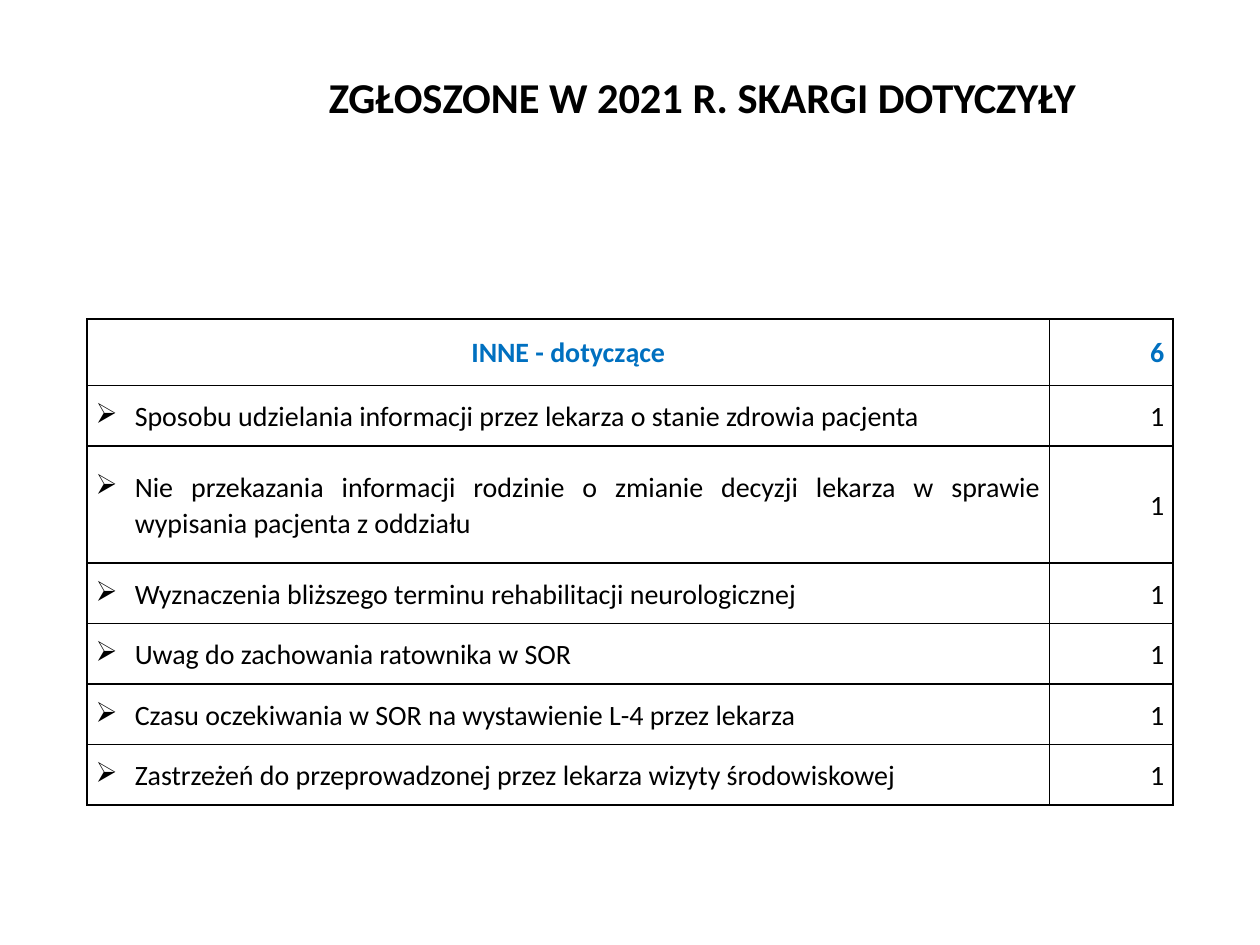
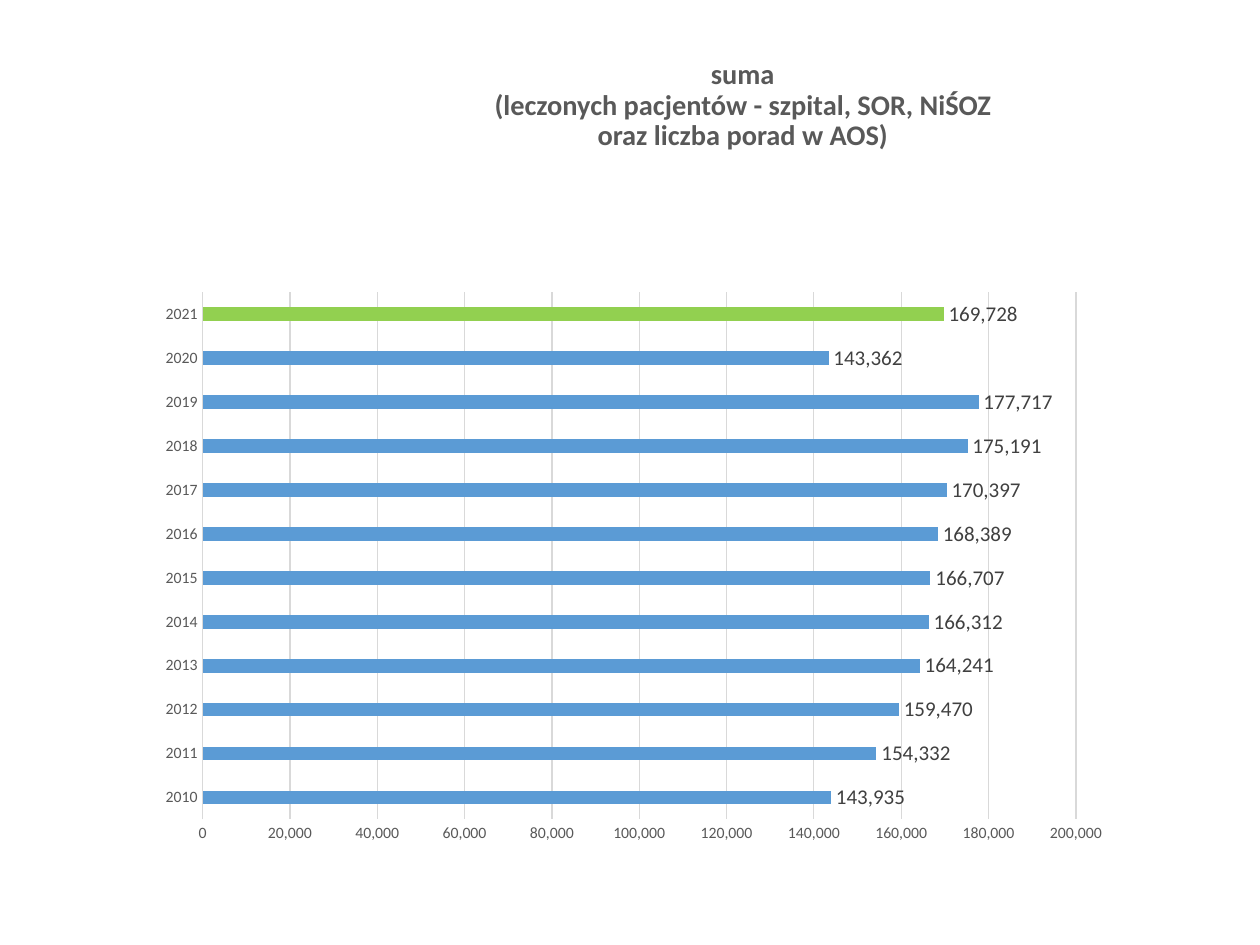
from lxml.etree import SubElement
from pptx import Presentation
from pptx.chart.data import CategoryChartData
from pptx.dml.color import RGBColor
from pptx.enum.chart import XL_CHART_TYPE as ChartType
from pptx.enum.chart import XL_LABEL_POSITION as LabelPosition
from pptx.enum.chart import XL_TICK_MARK as TickMark
from pptx.enum.text import MSO_ANCHOR as Anchor
from pptx.enum.text import PP_ALIGN as Align
from pptx.oxml.ns import qn
from pptx.util import Emu, Pt

PX = 9144  # EMU in one px, 100 px to the inch
FONT = "Calibri"
BLACK = RGBColor(0x00, 0x00, 0x00)
WHITE = RGBColor(0xFF, 0xFF, 0xFF)
HEADING_BLUE = RGBColor(0x00, 0x70, 0xC0)
DARK_GREY = RGBColor(0x40, 0x40, 0x40)
TEXT_GREY = RGBColor(0x59, 0x59, 0x59)
GRID_GREY = RGBColor(0xD9, 0xD9, 0xD9)
BAR_BLUE = RGBColor(0x5B, 0x9B, 0xD5)
BAR_GREEN = RGBColor(0x92, 0xD0, 0x50)

COMPLAINTS = [
    "Sposobu udzielania informacji przez lekarza o stanie zdrowia pacjenta",
    "Nie przekazania informacji rodzinie o zmianie decyzji lekarza w sprawie "
    "wypisania pacjenta z oddziału",
    "Wyznaczenia bliższego terminu rehabilitacji neurologicznej",
    "Uwag do zachowania ratownika w SOR",
    "Czasu oczekiwania w SOR na wystawienie L-4 przez lekarza",
    "Zastrzeżeń do przeprowadzonej przez lekarza wizyty środowiskowej",
]
ROW_HEIGHTS = [53, 48, 93, 48, 48, 48, 48]
FIRST_YEAR = 2010
PATIENTS = [143935, 154332, 159470, 164241, 166312, 166707,
            168389, 170397, 175191, 177717, 143362, 169728]


def px(length):
    return Emu(length * PX)


def style_font(font, size, color, bold=False):
    font.name = FONT
    font.size = Pt(size)
    font.bold = bold
    font.color.rgb = color


def write(frame, text, *, size=16, color=BLACK, bold=False,
          align=Align.CENTER, spacing=1.07, bullet=None, indent=31):
    """Fill the first paragraph of a text frame; a newline is a line break."""
    paragraph = frame.paragraphs[0]
    paragraph.text = text
    paragraph.alignment = align
    paragraph.line_spacing = spacing
    if bullet:
        properties = paragraph._p.get_or_add_pPr()
        properties.set("marL", str(px(indent)))
        properties.set("indent", str(-px(indent)))
        SubElement(properties, qn("a:buChar"), char=bullet)
    for run in paragraph.runs:
        style_font(run.font, size, color, bold)


def add_borders(cell, color=BLACK, width=1):
    properties = cell._tc.get_or_add_tcPr()
    for side in ("a:lnL", "a:lnR", "a:lnT", "a:lnB"):
        line = SubElement(properties, qn(side), w=str(Pt(width)))
        fill = SubElement(line, qn("a:solidFill"))
        SubElement(fill, qn("a:srgbClr"), val=str(color))


class Deck:
    def __init__(self, width, height):
        self.presentation = Presentation()
        self.presentation.slide_width = px(width)
        self.presentation.slide_height = px(height)
        self.slide = None

    def new_slide(self):
        layout = self.presentation.slide_layouts[6]
        self.slide = self.presentation.slides.add_slide(layout)

    def title(self, text, box, *, size, color, top_inset=5):
        frame = self.slide.shapes.add_textbox(*map(px, box)).text_frame
        frame.word_wrap = True
        frame.vertical_anchor = Anchor.MIDDLE
        frame.margin_top = px(top_inset)
        write(frame, text, size=size, color=color, bold=True, spacing=0.9)

    def cell(self, cell, text, **text_format):
        cell.vertical_anchor = Anchor.MIDDLE
        cell.margin_left = cell.margin_right = px(7)
        cell.margin_top = cell.margin_bottom = 0
        add_borders(cell)
        cell.fill.solid()
        cell.fill.fore_color.rgb = WHITE
        write(cell.text_frame, text, **text_format)

    def count_table(self, heading, items, left, top, widths, heights):
        """Table of items counted once each, with their total in the heading."""
        table = self.slide.shapes.add_table(
            len(heights), len(widths), px(left), px(top),
            px(sum(widths)), px(sum(heights))).table
        table.first_row = table.horz_banding = False
        for column, width in zip(table.columns, widths):
            column.width = px(width)
        for row, height in zip(table.rows, heights):
            row.height = px(height)
        strong = {"color": HEADING_BLUE, "bold": True}
        self.cell(table.cell(0, 0), heading, **strong)
        self.cell(table.cell(0, 1), str(len(items)), align=Align.RIGHT, **strong)
        for index, item in enumerate(items, start=1):
            self.cell(table.cell(index, 0), item, align=Align.JUSTIFY, bullet="➢")
            self.cell(table.cell(index, 1), "1", align=Align.RIGHT)

    def bar_chart(self, categories, values, box):
        """Horizontal bars with the last one highlighted."""
        data = CategoryChartData(number_format="#,##0")
        data.categories = categories
        data.add_series("Series 1", values)
        chart = self.slide.shapes.add_chart(
            ChartType.BAR_CLUSTERED, *map(px, box), data).chart
        chart.has_title = chart.has_legend = False
        style_font(chart.font, 10, BLACK)

        for axis in (chart.category_axis, chart.value_axis):
            axis.major_tick_mark = axis.minor_tick_mark = TickMark.NONE
            style_font(axis.tick_labels.font, 9, TEXT_GREY)
        value_axis = chart.value_axis
        value_axis.minimum_scale = 0
        value_axis.maximum_scale = 200000
        value_axis.major_unit = 20000
        value_axis.tick_labels.number_format = "#,##0"
        value_axis.tick_labels.number_format_is_linked = False
        value_axis.format.line.fill.background()
        for lined in (chart.category_axis, value_axis.major_gridlines):
            lined.format.line.color.rgb = GRID_GREY
            lined.format.line.width = Pt(0.75)

        plot = chart.plots[0]
        plot.gap_width = 219
        plot.vary_by_categories = False
        series = plot.series[0]
        for bar, color in ((series, BAR_BLUE),
                           (series.points[len(values) - 1], BAR_GREEN)):
            bar.format.fill.solid()
            bar.format.fill.fore_color.rgb = color
        labels = series.data_labels
        labels.show_value = True
        labels.position = LabelPosition.OUTSIDE_END
        labels.number_format = "#,##0"
        labels.number_format_is_linked = False
        style_font(labels.font, 12, DARK_GREY)


def main():
    deck = Deck(1000, 750)

    deck.new_slide()
    deck.title("ZGŁOSZONE W 2021 R. SKARGI DOTYCZYŁY", (184, 29, 747, 75),
               size=24.3, color=BLACK, top_inset=30)
    deck.count_table("INNE - dotyczące", COMPLAINTS, 69, 253,
                     [764, 98], ROW_HEIGHTS)

    deck.new_slide()
    deck.title("suma\n(leczonych pacjentów - szpital, SOR, NiŚOZ\n"
               "oraz liczba porad w AOS)", (248, 40, 683, 88),
               size=16.2, color=TEXT_GREY)
    years = [str(FIRST_YEAR + index) for index in range(len(PATIENTS))]
    deck.bar_chart(years, PATIENTS, (116, 223, 774, 455))

    deck.presentation.save("out.pptx")


if __name__ == "__main__":
    main()
